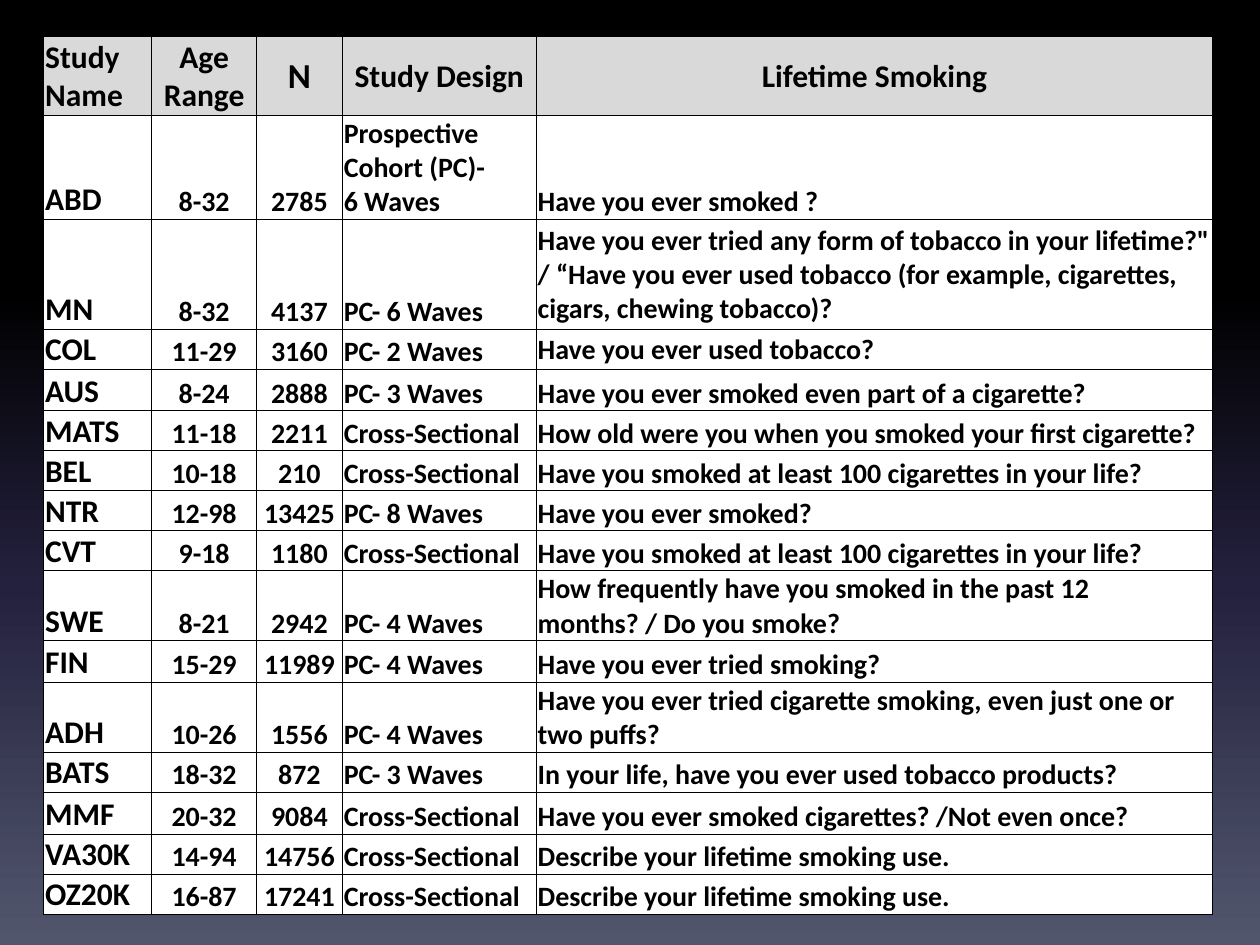
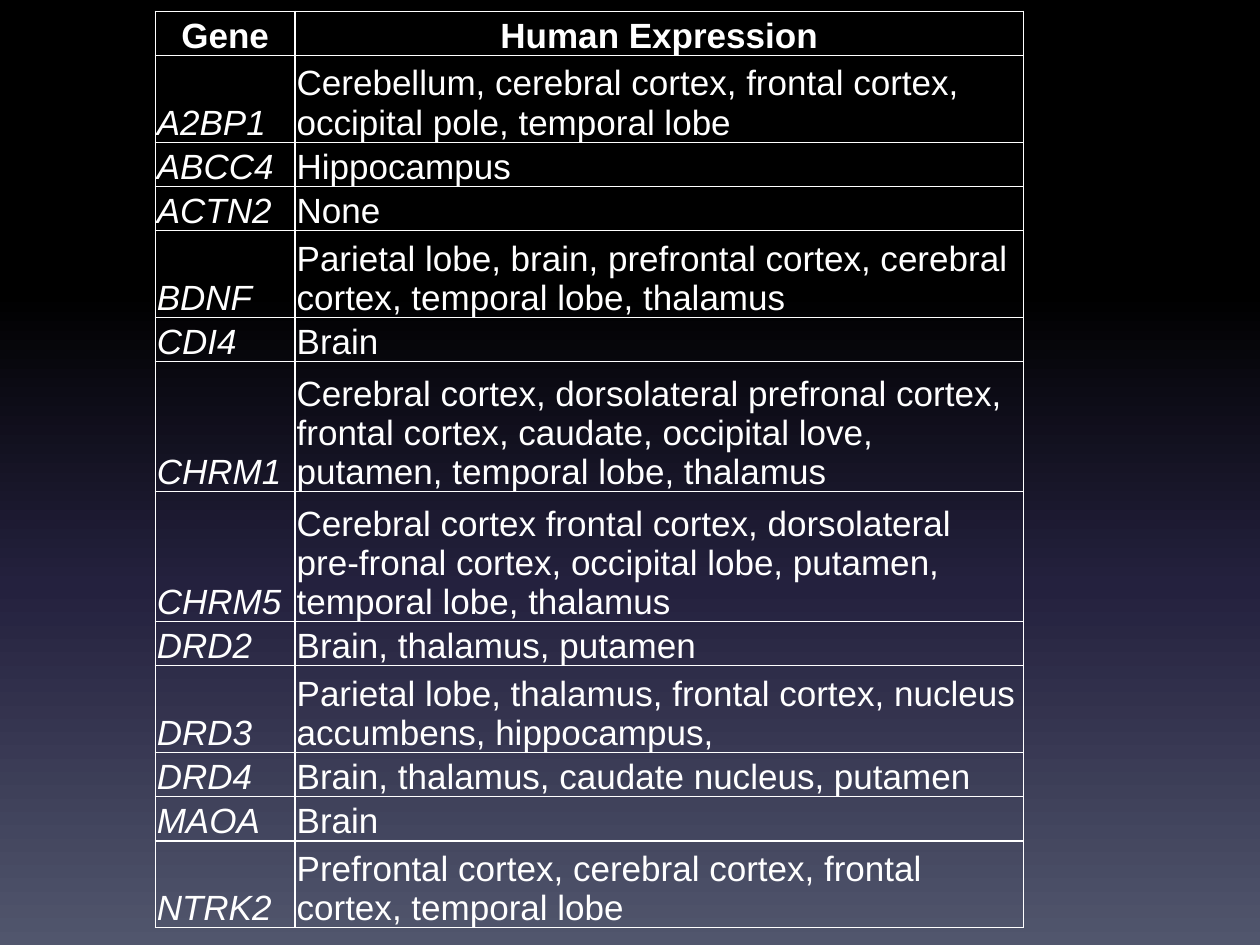
from copy import deepcopy
from dataclasses import dataclass

from lxml import etree
from pptx import Presentation
from pptx import util as u
from pptx.dml.color import RGBColor
from pptx.enum import text
from pptx.oxml import ns

LEFT, CENTER = text.PP_ALIGN.LEFT, text.PP_ALIGN.CENTER
MIDDLE, BOTTOM = text.MSO_ANCHOR.MIDDLE, text.MSO_ANCHOR.BOTTOM


@dataclass(frozen=True)
class Theme:
    black: str = "000000"
    white: str = "FFFFFF"
    header_grey: str = "D9D9D9"
    gradient: tuple = ((0, "000000"), (0.31, "000000"), (0.62, "24213E"), (1, "51566D"))
    study_font: str = "Calibri"
    gene_font: str = "Arial"
    large: int = 20
    medium: int = 18
    small: int = 16
    cell_inset: float = 0.03


@dataclass
class CellLook:
    font: str
    size: int
    color: str
    bold: bool = False
    italic: bool = False
    align: text.PP_ALIGN = LEFT
    anchor: text.MSO_ANCHOR = BOTTOM
    fill: str | None = None


class Deck:
    def __init__(self, theme):
        self.theme = theme
        self.presentation = Presentation()
        self.presentation.slide_width = u.Cm(25.4)
        self.presentation.slide_height = u.Cm(19.05)
        self.slide = None
        self.paint_master()

    def paint_master(self):
        """Give every slide the dark vertical gradient."""
        fill = self.presentation.slide_master.background.fill
        fill.gradient()
        fill.gradient_angle = 270
        first_stop = fill.gradient_stops[0]._gs
        stop_list = first_stop.getparent()
        while len(stop_list) < len(self.theme.gradient):
            stop_list.append(deepcopy(first_stop))
        for stop, (position, color) in zip(fill.gradient_stops, self.theme.gradient):
            stop.position = position
            stop.color.rgb = RGBColor.from_string(color)

    def add_slide(self):
        blank_layout = self.presentation.slide_layouts[6]
        self.slide = self.presentation.slides.add_slide(blank_layout)

    def add_table(self, rows, left, top, widths, heights, border, look_at):
        """Lengths are in cm; look_at(row, column) returns the CellLook."""
        shape = self.slide.shapes.add_table(
            len(rows), len(widths), u.Cm(left), u.Cm(top),
            u.Cm(sum(widths)), u.Cm(sum(heights)))
        table = shape.table
        table.horz_banding = False
        for column, width in zip(table.columns, widths):
            column.width = u.Cm(width)
        for row, height in zip(table.rows, heights):
            row.height = u.Cm(height)
        for row_index, row in enumerate(rows):
            for column_index, wording in enumerate(row):
                cell = table.cell(row_index, column_index)
                cell.text_frame.text = wording
                self.format_cell(cell, look_at(row_index, column_index))
                self.draw_borders(cell, *border)

    def format_cell(self, cell, look):
        inset = u.Cm(self.theme.cell_inset)
        cell.margin_left = cell.margin_right = cell.margin_top = inset
        cell.margin_bottom = 0
        cell.vertical_anchor = look.anchor
        if look.fill:
            cell.fill.solid()
            cell.fill.fore_color.rgb = RGBColor.from_string(look.fill)
        else:
            cell.fill.background()
        for paragraph in cell.text_frame.paragraphs:
            paragraph.alignment = look.align
            for run in paragraph.runs:
                run.font.name = look.font
                run.font.size = u.Pt(look.size)
                run.font.bold = look.bold
                run.font.italic = look.italic
                run.font.color.rgb = RGBColor.from_string(look.color)

    def draw_borders(self, cell, color, points):
        properties = cell._tc.get_or_add_tcPr()
        for index, side in enumerate(("lnL", "lnR", "lnT", "lnB")):
            line = etree.Element(ns.qn(f"a:{side}"), w=str(u.Pt(points)))
            fill = etree.SubElement(line, ns.qn("a:solidFill"))
            etree.SubElement(fill, ns.qn("a:srgbClr"), val=color)
            properties.insert(index, line)


STUDIES = [
    ("Study Name", "Age Range", "N", "Study Design", "Lifetime Smoking"),
    ("ABD", "8-32", "2785", "Prospective Cohort (PC)-\n6 Waves",
     "Have you ever smoked ?"),
    ("MN", "8-32", "4137", "PC- 6 Waves",
     "Have you ever tried any form of tobacco in your lifetime?\" / “Have you ever "
     "used tobacco (for example, cigarettes, cigars, chewing tobacco)?"),
    ("COL", "11-29", "3160", "PC- 2 Waves", "Have you ever used tobacco?"),
    ("AUS", "8-24", "2888", "PC- 3 Waves",
     "Have you ever smoked even part of a cigarette?"),
    ("MATS", "11-18", "2211", "Cross-Sectional",
     "How old were you when you smoked your first cigarette?"),
    ("BEL", "10-18", "210", "Cross-Sectional",
     "Have you smoked at least 100 cigarettes in your life?"),
    ("NTR", "12-98", "13425", "PC- 8 Waves", "Have you ever smoked?"),
    ("CVT", "9-18", "1180", "Cross-Sectional",
     "Have you smoked at least 100 cigarettes in your life?"),
    ("SWE", "8-21", "2942", "PC- 4 Waves",
     "How frequently have you smoked in the past 12 months? / Do you smoke?"),
    ("FIN", "15-29", "11989", "PC- 4 Waves", "Have you ever tried smoking?"),
    ("ADH", "10-26", "1556", "PC- 4 Waves",
     "Have you ever tried cigarette smoking, even just one or two puffs?"),
    ("BATS", "18-32", "872", "PC- 3 Waves",
     "In your life, have you ever used tobacco products?"),
    ("MMF", "20-32", "9084", "Cross-Sectional",
     "Have you ever smoked cigarettes? /Not even once?"),
    ("VA30K", "14-94", "14756", "Cross-Sectional",
     "Describe your lifetime smoking use."),
    ("OZ20K", "16-87", "17241", "Cross-Sectional",
     "Describe your lifetime smoking use."),
]
STUDY_HEIGHTS = [1.12, 1.91, 2.21, 0.79, 0.84, 0.69, 0.74, 0.69,
                 0.61, 1.12, 0.84, 0.74, 0.81, 0.84, 0.81, 0.74]

GENES = [
    ("Gene", "Human Expression"),
    ("A2BP1", "Cerebellum, cerebral cortex, frontal cortex, occipital pole, "
              "temporal lobe"),
    ("ABCC4", "Hippocampus"),
    ("ACTN2", "None"),
    ("BDNF", "Parietal lobe, brain, prefrontal cortex, cerebral cortex, "
             "temporal lobe, thalamus"),
    ("CDI4", "Brain"),
    ("CHRM1", "Cerebral cortex, dorsolateral prefronal cortex, frontal cortex, "
              "caudate, occipital love, putamen, temporal lobe, thalamus"),
    ("CHRM5", "Cerebral cortex frontal cortex, dorsolateral pre-fronal cortex, "
              "occipital lobe, putamen, temporal lobe, thalamus"),
    ("DRD2", "Brain, thalamus, putamen"),
    ("DRD3", "Parietal lobe, thalamus, frontal cortex, nucleus accumbens, "
             "hippocampus,"),
    ("DRD4", "Brain, thalamus, caudate nucleus, putamen"),
    ("MAOA", "Brain"),
    ("NTRK2", "Prefrontal cortex, cerebral cortex, frontal cortex, temporal lobe"),
]
GENE_LINES = [1, 2, 1, 1, 2, 1, 3, 3, 1, 2, 1, 1, 2]
HEIGHT_BY_LINES = {1: 0.89, 2: 1.75, 3: 2.62}


def add_studies_slide(deck):
    theme = deck.theme
    name, age, count, design, question = range(5)
    middle_questions = [row for row, study in enumerate(STUDIES)
                        if study[name] in ("MN", "COL")]

    def look_at(row, column):
        look = CellLook(theme.study_font, theme.small, theme.black,
                        bold=True, fill=theme.white)
        if row == 0:
            look.fill, look.anchor = theme.header_grey, MIDDLE
            look.size = theme.large if column == count else theme.medium
            look.align = LEFT if column == name else CENTER
        elif column == name:
            look.size = theme.medium
        elif column in (age, count):
            look.align = CENTER
        elif column == question and row in middle_questions:
            look.anchor = MIDDLE
        return look

    deck.add_slide()
    deck.add_table(STUDIES, 0.88, 0.74, [2.18, 2.11, 1.73, 3.91, 13.64],
                   STUDY_HEIGHTS, (theme.black, 0.5), look_at)


def add_genes_slide(deck):
    theme = deck.theme

    def look_at(row, column):
        header = row == 0
        return CellLook(theme.gene_font, theme.large, theme.white, bold=header,
                        italic=not header and column == 0,
                        align=CENTER if header else LEFT)

    deck.add_slide()
    deck.add_table(GENES, 3.13, 0.23, [2.82, 14.68],
                   [HEIGHT_BY_LINES[lines] for lines in GENE_LINES],
                   (theme.white, 1), look_at)


def main():
    deck = Deck(Theme())
    add_studies_slide(deck)
    add_genes_slide(deck)
    deck.presentation.save("out.pptx")


if __name__ == "__main__":
    main()
